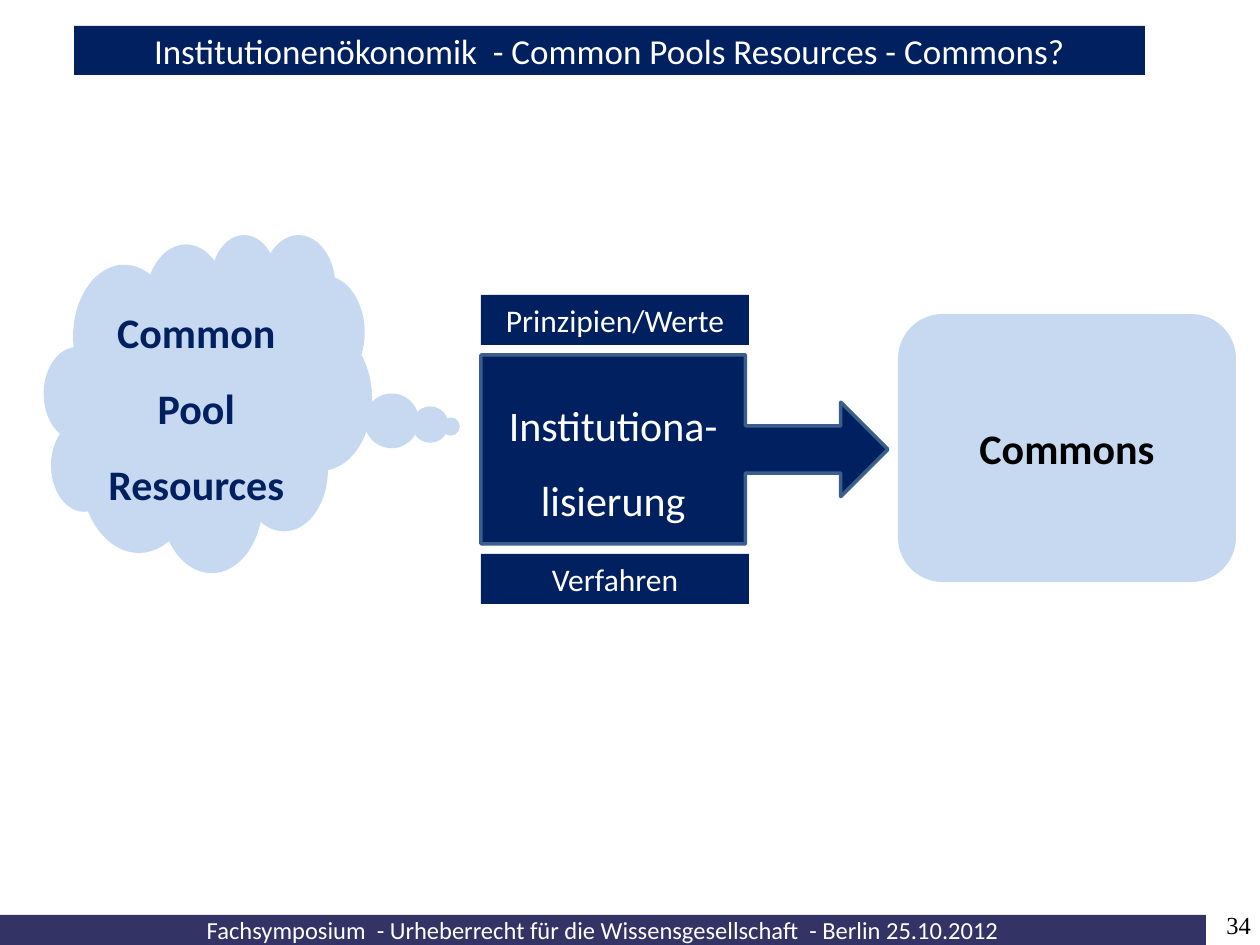
from pptx import Presentation
from pptx.dml.color import RGBColor
from pptx.enum.shapes import MSO_SHAPE
from pptx.enum.text import MSO_ANCHOR, MSO_AUTO_SIZE, PP_ALIGN
from pptx.util import Emu, Pt

RECTANGLE = MSO_SHAPE.RECTANGLE
ROUNDED = MSO_SHAPE.ROUNDED_RECTANGLE
CLOUD = MSO_SHAPE.CLOUD_CALLOUT
ARROW_CALLOUT = MSO_SHAPE.RIGHT_ARROW_CALLOUT
CENTER, RIGHT = PP_ALIGN.CENTER, PP_ALIGN.RIGHT
MIDDLE = MSO_ANCHOR.MIDDLE
FIXED_SIZE = MSO_AUTO_SIZE.NONE

NAVY = RGBColor(0x00, 0x20, 0x60)
INDIGO = RGBColor(0x33, 0x33, 0x66)
PALE_BLUE = RGBColor(0xC6, 0xD9, 0xF1)
STEEL_BLUE = RGBColor(0x3A, 0x5F, 0x8C)
WHITE = RGBColor(0xFF, 0xFF, 0xFF)
BLACK = RGBColor(0x00, 0x00, 0x00)

EMU_PER_PX = 914400 / 126
TITLE_ONLY = 5

INSTITUTION_LEFT, INSTITUTION_TOP = 481, 355
INSTITUTION_HEIGHT = 189
LABEL_WIDTH, LABEL_HEIGHT, LABEL_GAP = 268, 50, 10


def px(length):
    return Emu(round(length * EMU_PER_PX))


def write_text(box, text, size=24, color=WHITE, bold=False, font="Calibri",
               align=CENTER, spacing=1.0, inset=None):
    frame = box.text_frame
    frame.word_wrap = True
    frame.auto_size = FIXED_SIZE
    frame.vertical_anchor = MIDDLE
    if inset is not None:
        frame.margin_left = frame.margin_right = px(inset)
        frame.margin_top = frame.margin_bottom = px(inset)
    frame.text = text
    for para in frame.paragraphs:
        para.alignment = align
        para.line_spacing = spacing
        for span in para.runs:
            span.font.name = font
            span.font.size = Pt(size)
            span.font.bold = bold
            span.font.color.rgb = color


def place(box, left, top, width, height):
    box.left, box.top = px(left), px(top)
    box.width, box.height = px(width), px(height)


def paint(box, color):
    box.fill.solid()
    box.fill.fore_color.rgb = color


def add_title(page, text):
    title = page.shapes.title
    place(title, 74, 26, 1071, 49)
    paint(title, NAVY)
    write_text(title, text, size=20)


def add_box(page, kind, bounds, fill, text, outline=None, **text_format):
    box = page.shapes.add_shape(kind, *map(px, bounds))
    box.shadow.inherit = False
    paint(box, fill)
    if outline is None:
        box.line.fill.background()
    else:
        box.line.color.rgb = outline
        box.line.width = Pt(2)
    write_text(box, text, **text_format)
    return box


def add_page_number(page, text):
    box = page.shapes.add_textbox(px(1165), px(911), px(86), px(28))
    write_text(box, text, size=14, color=BLACK, font="Times New Roman",
               align=RIGHT, inset=0)


def main():
    deck = Presentation()
    deck.slide_width, deck.slide_height = px(1260), px(945)
    page = deck.slides.add_slide(deck.slide_layouts[TITLE_ONLY])

    add_title(page, "Institutionenökonomik  - Common Pools Resources - Commons?")
    add_box(page, RECTANGLE, (0, 915, 1206, 30), INDIGO,
            "Fachsymposium  - Urheberrecht für die Wissensgesellschaft  - Berlin 25.10.2012",
            size=14, inset=0)
    add_page_number(page, "34")

    cloud = add_box(page, CLOUD, (44, 234, 328, 338), PALE_BLUE,
                    "Common Pool Resources", color=NAVY, bold=True, spacing=1.5)
    cloud.adjustments[0] = 0.74
    cloud.adjustments[1] = 0.07

    add_box(page, ARROW_CALLOUT,
            (INSTITUTION_LEFT, INSTITUTION_TOP, 407, INSTITUTION_HEIGHT), NAVY,
            "Institutiona-\nlisierung", outline=STEEL_BLUE, spacing=1.5)
    add_box(page, ROUNDED, (898, 314, 338, 268), PALE_BLUE, "Commons",
            color=BLACK, bold=True)

    label_tops = {
        "Prinzipien/Werte": INSTITUTION_TOP - LABEL_GAP - LABEL_HEIGHT,
        "Verfahren": INSTITUTION_TOP + INSTITUTION_HEIGHT + LABEL_GAP,
    }
    for label, top in label_tops.items():
        add_box(page, RECTANGLE, (INSTITUTION_LEFT, top, LABEL_WIDTH, LABEL_HEIGHT),
                NAVY, label, size=18)

    deck.save("out.pptx")


if __name__ == "__main__":
    main()
